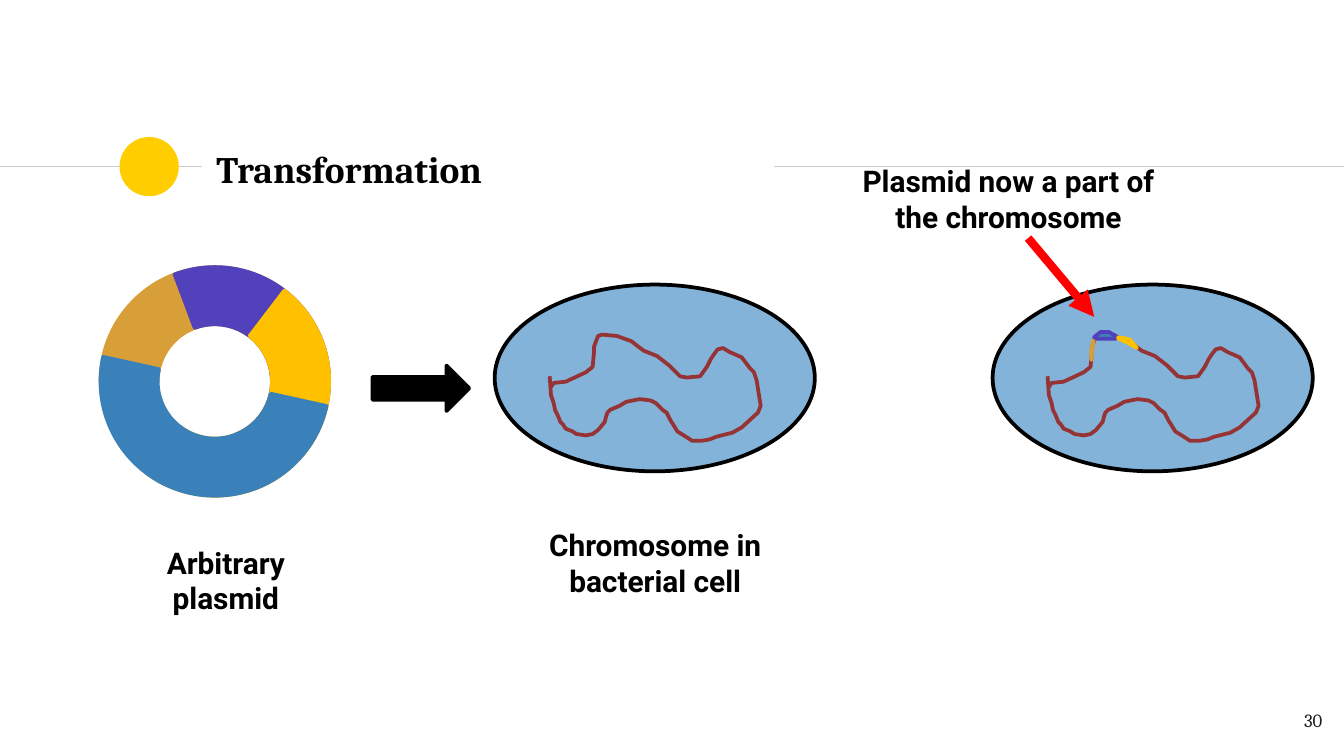
import pptx
import pptx.util
import pptx.dml.color
import pptx.enum.shapes
import pptx.enum.text
import pptx.oxml
import pptx.oxml.ns

Cm = pptx.util.Cm
Pt = pptx.util.Pt
Kind = pptx.enum.shapes.MSO_SHAPE
Align = pptx.enum.text.PP_ALIGN
Fit = pptx.enum.text.MSO_AUTO_SIZE
Anchor = pptx.enum.text.MSO_ANCHOR

HUES = {
    "black": "000000", "ink": "1D1D1B", "rule": "CCCCCC", "sun": "FFCD00",
    "cell": "83B3D9", "strand": "963334", "red": "FF0000", "amber": "D89F39",
    "violet": "5142BB", "gold": "FFC000", "blue": "3A81BA",
}

UNIT = Cm(0.0254)
SHIFT = 9.41

STRAND = [
    (409, 280), (410, 294), (412, 300), (413, 305), (415, 309), (417, 314),
    (419, 316), (421, 319), (426, 321), (429, 323), (436, 324), (441, 323),
    (445, 320), (450, 314), (451, 310), (452, 307), (454, 305), (461, 302),
    (466, 299), (471, 298), (476, 297), (484, 298), (488, 300), (493, 305),
    (496, 307), (499, 313), (501, 316), (504, 321), (512, 326), (515, 328),
    (522, 328), (528, 327), (533, 325), (545, 322), (552, 318), (564, 307),
    (566, 302), (563, 283), (561, 277), (558, 274), (552, 266), (543, 262),
    (538, 259), (534, 260), (531, 264), (529, 267), (526, 273), (521, 280),
    (511, 281), (506, 280), (498, 272), (489, 265), (479, 261), (475, 258),
    (470, 254), (459, 250), (448, 249), (445, 250), (442, 258), (442, 262),
    (441, 273), (436, 277), (421, 284), (412, 285), (410, 288),
]
GENES = {
    "amber": [(812, 266), (812, 260), (814, 252), (813, 258), (812, 268)],
    "violet": [(814, 251), (819, 247), (825, 247), (832, 251), (830, 252),
               (816, 252)],
    "gold": [(832, 252), (837, 254), (846, 259), (841, 253), (838, 252),
             (832, 251)],
}


class Deck:
    def __init__(self, slide):
        self.slide = slide
        self.shapes = slide.shapes

    def hue(self, name):
        return pptx.dml.color.RGBColor.from_string(HUES[name])

    def paint(self, shape, fill, line):
        shape.shadow.inherit = False
        if fill:
            shape.fill.solid()
            shape.fill.fore_color.rgb = self.hue(fill)
        else:
            shape.fill.background()
        if line:
            shape.line.color.rgb = self.hue(line)
            shape.line.width = Pt(2)
        else:
            shape.line.fill.background()

    def shape(self, kind, box, fill, line=None, turn=0, adjust=()):
        shape = self.shapes.add_shape(kind, *map(Cm, box))
        shape.rotation = turn
        for place, value in enumerate(adjust):
            shape.adjustments[place] = value
        self.paint(shape, fill, line)

    def trace(self, points, line, fill=None, shift=0):
        pen = self.shapes.build_freeform(*points[0], scale=UNIT)
        pen.add_line_segments(points[1:], close=fill is not None)
        self.paint(pen.convert_to_shape(Cm(shift), 0), fill, line)

    def line(self, start, end, hue, width, arrow=False):
        line = self.shapes.add_connector(
            pptx.enum.shapes.MSO_CONNECTOR.STRAIGHT,
            *map(Cm, start + end))
        line.line.color.rgb = self.hue(hue)
        line.line.width = Pt(width)
        props = line._element.spPr
        if arrow:
            edge = props.find(pptx.oxml.ns.qn("a:ln"))
            tail = pptx.oxml.parse_xml(
                "<a:tailEnd %s type='triangle'/>" % pptx.oxml.ns.nsdecls("a"))
            edge.append(tail)
        props.append(pptx.oxml.parse_xml(
            "<a:effectLst %s/>" % pptx.oxml.ns.nsdecls("a")))

    def letter(self, shape, text, font, size, hue, bold, align, pad=0.25):
        frame = shape.text_frame
        frame.text = text
        frame.word_wrap = True
        frame.margin_left = frame.margin_right = Cm(0.25)
        frame.margin_top = frame.margin_bottom = Cm(pad)
        para = frame.paragraphs[0]
        para.alignment = align
        for run in para.runs:
            run.font.name = font
            run.font.size = Pt(size)
            run.font.bold = bold
            run.font.color.rgb = self.hue(hue)
        return frame

    def title(self, text, box):
        shape = self.shapes.title
        shape.left, shape.top, shape.width, shape.height = map(Cm, box)
        frame = self.letter(shape, text, "Cambria", 20, "black", True,
                            Align.LEFT)
        frame.vertical_anchor = Anchor.MIDDLE
        frame.auto_size = Fit.NONE

    def label(self, text, box):
        shape = self.shapes.add_textbox(*map(Cm, box))
        frame = self.letter(shape, text, "Roboto", 16, "black", True,
                            Align.CENTER, 0.13)
        frame.auto_size = Fit.SHAPE_TO_FIT_TEXT

    def number(self, text, box):
        shape = self.shapes.add_textbox(*map(Cm, box))
        self.letter(shape, text, "Cambria", 10, "ink", False, Align.RIGHT)

    def cell(self, shift=0):
        self.shape(Kind.OVAL, (9.35 + shift, 5.38, 6.05, 3.53),
                   "cell", "black")
        self.trace(STRAND, "strand", shift=shift)


def main():
    show = pptx.Presentation()
    show.slide_width, show.slide_height = Cm(25.4), Cm(14.29)
    deck = Deck(show.slides.add_slide(show.slide_layouts[5]))

    deck.line((0, 3.15), (3.81, 3.15), "rule", 0.75)
    deck.shape(Kind.OVAL, (2.26, 2.59, 1.12, 1.12), "sun")
    deck.line((14.63, 3.15), (25.4, 3.15), "rule", 0.75)
    deck.title("Transformation", (3.84, 2.57, 10.77, 1.22))
    deck.number("30", (23.72, 13.18, 1.52, 1.09))

    deck.label("Arbitrary plasmid", (1.87, 10.16, 4.8, 1.63))
    deck.shape(Kind.RIGHT_ARROW, (7.04, 6.91, 1.83, 0.86), "black", "black")
    deck.cell()
    deck.label("Chromosome in bacterial cell", (9.96, 9.83, 4.85, 1.63))

    deck.cell(SHIFT)
    for hue, points in GENES.items():
        deck.trace(points, hue, "blue")
    deck.line((19.43, 4.5), (20.68, 5.99), "red", 4.5, arrow=True)
    deck.label("Plasmid now a part of the chromosome",
               (15.95, 2.95, 6.22, 1.63))

    turns = {"amber": 0, "violet": 69.4, "gold": 127.4, "blue": 192.4}
    for hue, turn in turns.items():
        deck.shape(Kind.BLOCK_ARC, (1.9, 5.05, 4.32, 4.32), hue, hue, turn,
                   (108, 0, 0.25))

    show.save("out.pptx")


if __name__ == "__main__":
    main()
